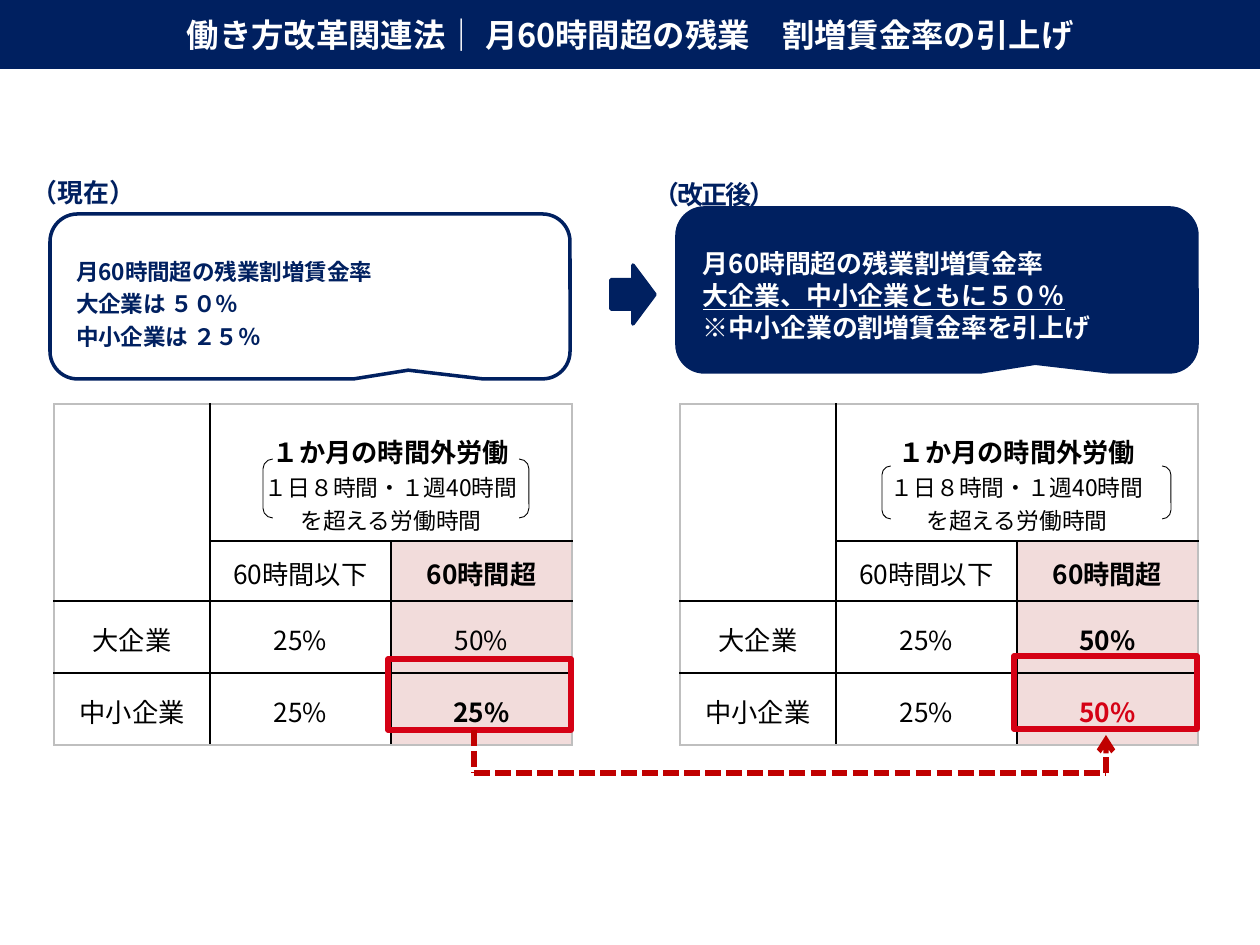
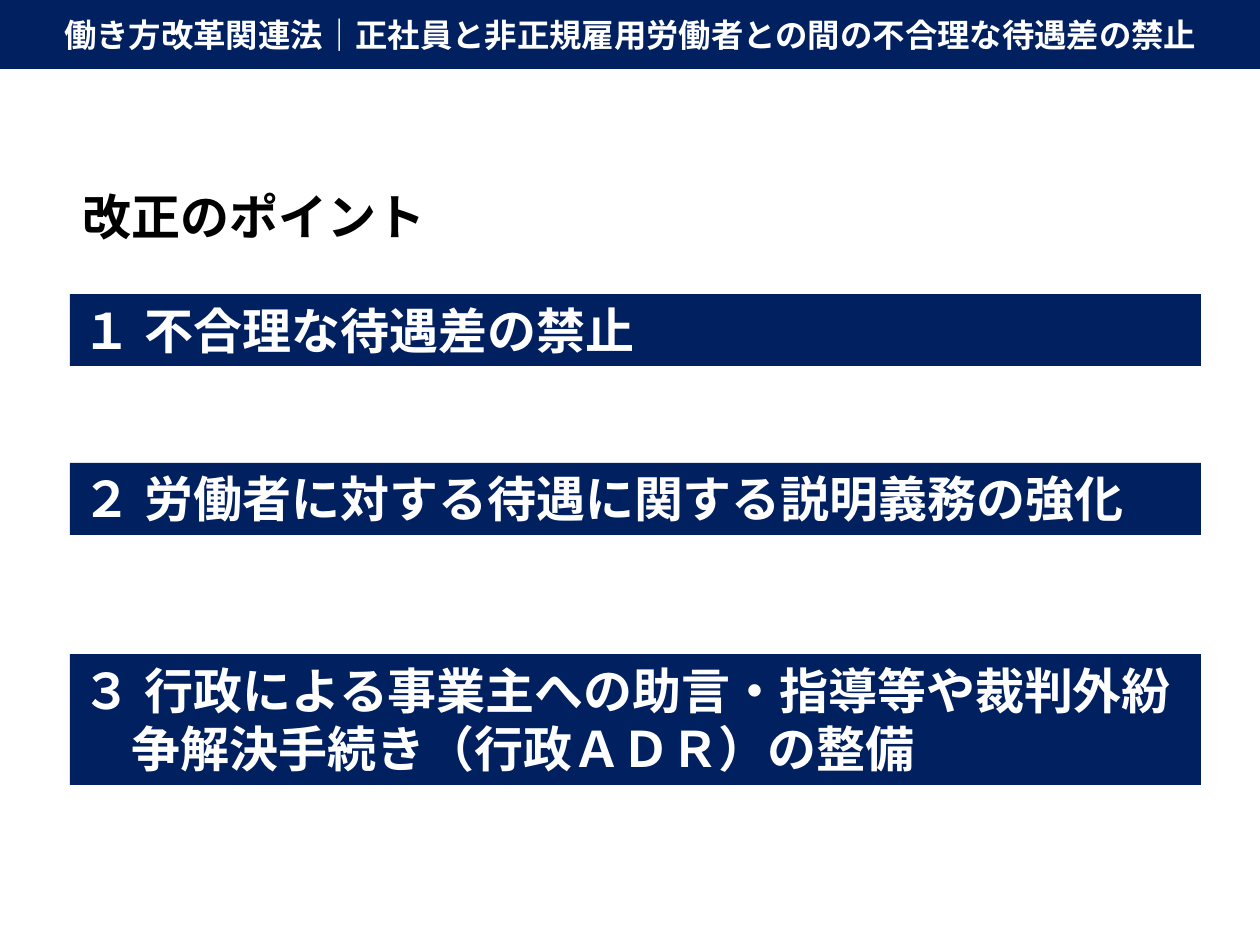
from dataclasses import dataclass
from typing import NamedTuple

from lxml.etree import SubElement
from pptx import Presentation
from pptx.dml.color import RGBColor
from pptx.enum.dml import MSO_LINE
from pptx.enum.lang import MSO_LANGUAGE_ID
from pptx.enum.shapes import MSO_CONNECTOR, MSO_SHAPE
from pptx.enum.text import MSO_ANCHOR, PP_ALIGN
from pptx.oxml.ns import qn
from pptx.util import Emu, Pt


@dataclass(frozen=True)
class Theme:
    navy: str = "002060"
    white: str = "FFFFFF"
    black: str = "000000"
    red: str = "D50115"
    dash_red: str = "C00000"
    pink: str = "F2DCDB"
    grey: str = "BFBFBF"
    body_font: str = "Noto Sans CJK JP"
    point_font: str = "League Spartan"
    title_size: float = 18.5
    label_size: float = 14.8
    callout_size: float = 12.9
    cell_size: float = 15
    note_size: float = 13
    point_size: float = 28


THEME = Theme()


class Box(NamedTuple):
    left: int
    top: int
    width: int
    height: int


class Line(NamedTuple):
    text: str
    underline: bool = False


@dataclass(frozen=True)
class Panel:
    """One side of the before/after comparison."""
    label: str
    label_box: Box
    spacing: float
    callout_box: Box
    callout_fill: str
    callout_color: str
    callout_size: float
    callout: tuple[Line, ...]
    table_left: int
    large_over_60: str
    large_bold: bool
    small_over_60: str
    small_color: str
    bracket: Box
    highlight: Box


class Point(NamedTuple):
    box: Box
    lines: tuple[str, ...]


SLIDE_WIDTH, SLIDE_HEIGHT = 1260, 945
TITLE_BAND = Box(0, 0, SLIDE_WIDTH, 69)
DEFAULT_INSETS = (13, 6, 13, 6)
CALLOUT_INSETS = (18, 9, 13, 0)
CELL_INSETS = (8, 9, 8, 5)
CALLOUT_TAIL = (0.189, 0.447, 0.167)
TABLE_TOP = 404
COLUMNS = (156, 181, 181)
ROWS = (137, 60, 72, 72)
ARROW_BOX = Box(611, 265, 44, 59)
CHANGE_ROUTE = ((474, 730), (474, 773), (1106, 773), (1106, 735))

PANELS = (
    Panel("（現在）", Box(19, 171, 180, 44), 0,
          Box(50, 214, 520, 165), THEME.white, THEME.navy, THEME.callout_size,
          (Line("月60時間超の残業割増賃金率"), Line("大企業は ５０％"), Line("中小企業は ２５％")),
          54, "50%", False, "25%", THEME.black,
          Box(263, 459, 266, 59), Box(388, 659, 183, 71)),
    Panel("（改正後）", Box(640, 173, 180, 44), -0.9,
          Box(677, 208, 520, 164), THEME.navy, THEME.white, THEME.label_size,
          (Line("月60時間超の残業割増賃金率"), Line("大企業、中小企業ともに５０％", True),
           Line("※中小企業の割増賃金率を引上げ")),
          680, "50%", True, "50%", THEME.red,
          Box(882, 466, 289, 53), Box(1014, 656, 183, 73)),
)

POINT_HEADING = Box(70, 180, 420, 72)
POINTS = (
    Point(Box(70, 294, 1131, 72), ("１ 不合理な待遇差の禁止",)),
    Point(Box(70, 463, 1131, 72), ("２ 労働者に対する待遇に関する説明義務の強化",)),
    Point(Box(70, 654, 1131, 131),
          ("３ 行政による事業主への助言・指導等や裁判外紛", "　争解決手続き（行政ＡＤＲ）の整備")),
)


def px(length: int) -> Emu:
    return Emu(round(length * 914400 / 126))


def emu_box(box: Box) -> list[Emu]:
    return [px(length) for length in box]


def rgb(color: str) -> RGBColor:
    return RGBColor.from_string(color)


def write(frame, text: str, *, size: float, color: str, bold: bool = True,
          underline: bool = False, font: str = THEME.body_font, align=PP_ALIGN.LEFT,
          line_spacing=None, spacing: float = 0) -> None:
    """Fill the frame's empty first paragraph, or add the next one."""
    paragraph = frame.paragraphs[-1]
    if paragraph.runs:
        paragraph = frame.add_paragraph()
    paragraph.alignment = align
    if line_spacing:
        paragraph.line_spacing = line_spacing
    run = paragraph.add_run()
    run.text = text
    style = run.font
    style.size, style.bold, style.underline = Pt(size), bold, underline
    style.color.rgb = rgb(color)
    style.name = font
    style.language_id = MSO_LANGUAGE_ID.JAPANESE
    properties = run._r.get_or_add_rPr()
    SubElement(properties, qn("a:ea")).set("typeface", font)
    if spacing:
        properties.set("spc", str(round(spacing * 100)))


def set_insets(holder, insets: tuple[int, ...], anchor) -> None:
    """Works for text frames and table cells alike."""
    (holder.margin_left, holder.margin_top,
     holder.margin_right, holder.margin_bottom) = map(px, insets)
    holder.vertical_anchor = anchor


def add_shape(slide, kind, box: Box, *, fill: str = "", line: str = "", width: float = 1,
              insets=DEFAULT_INSETS, anchor=MSO_ANCHOR.TOP):
    shape = slide.shapes.add_shape(kind, *emu_box(box))
    shape.shadow.inherit = False
    if fill:
        shape.fill.solid()
        shape.fill.fore_color.rgb = rgb(fill)
    else:
        shape.fill.background()
    if line:
        shape.line.color.rgb = rgb(line)
        shape.line.width = Pt(width)
    else:
        shape.line.fill.background()
    shape.text_frame.word_wrap = True
    set_insets(shape.text_frame, insets, anchor)
    return shape


def add_label(slide, box: Box, text: str, **text_format) -> None:
    frame = slide.shapes.add_textbox(*emu_box(box)).text_frame
    frame.word_wrap = True
    set_insets(frame, DEFAULT_INSETS, MSO_ANCHOR.TOP)
    write(frame, text, **text_format)


def add_title_slide(deck, title: str):
    """Add a blank slide topped by the shared title band."""
    slide = deck.slides.add_slide(deck.slide_layouts[6])
    band = add_shape(slide, MSO_SHAPE.RECTANGLE, TITLE_BAND, fill=THEME.navy,
                     anchor=MSO_ANCHOR.MIDDLE)
    write(band.text_frame, title, size=THEME.title_size, color=THEME.white,
          align=PP_ALIGN.CENTER)
    return slide


def set_borders(cell, row: int, column: int) -> None:
    """Grey on the table's outside edges, black inside."""
    last_column = column + cell.span_width - 1 if cell.is_merge_origin else column
    outer_edges = {"lnL": column == 0, "lnR": last_column == len(COLUMNS) - 1,
                   "lnT": row == 0, "lnB": row == len(ROWS) - 1}
    properties = cell._tc.get_or_add_tcPr()
    for index, (edge, is_outer) in enumerate(outer_edges.items()):
        border = properties.makeelement(qn(f"a:{edge}"), {"w": str(Pt(1))})
        fill = SubElement(border, qn("a:solidFill"))
        SubElement(fill, qn("a:srgbClr")).set("val", THEME.grey if is_outer else THEME.black)
        properties.insert(index, border)


def add_rate_table(slide, panel: Panel) -> None:
    box = Box(panel.table_left, TABLE_TOP, sum(COLUMNS), sum(ROWS))
    table = slide.shapes.add_table(len(ROWS), len(COLUMNS), *emu_box(box)).table
    table.first_row = table.horz_banding = False
    for column, width in zip(table.columns, COLUMNS):
        column.width = px(width)
    for row, height in zip(table.rows, ROWS):
        row.height = px(height)
    table.cell(0, 0).merge(table.cell(1, 0))
    table.cell(0, 1).merge(table.cell(0, 2))
    for r in range(len(ROWS)):
        for c in range(len(COLUMNS)):
            cell = table.cell(r, c)
            over_60 = r > 0 and c == 2
            cell.fill.solid()
            cell.fill.fore_color.rgb = rgb(THEME.pink if over_60 else THEME.white)
            set_insets(cell, CELL_INSETS, MSO_ANCHOR.MIDDLE)
            set_borders(cell, r, c)

    centred = dict(color=THEME.black, align=PP_ALIGN.CENTER)
    header = table.cell(0, 1).text_frame
    write(header, "１か月の時間外労働", size=THEME.cell_size, line_spacing=1.5, **centred)
    for note in ("１日８時間・１週40時間", "を超える労働時間"):
        write(header, note, size=THEME.note_size, bold=False, **centred)
    rates = (
        ("", "60時間以下", "60時間超"),
        ("大企業", "25%", panel.large_over_60),
        ("中小企業", "25%", panel.small_over_60),
    )
    for r, values in enumerate(rates, start=1):
        for c, value in enumerate(values):
            if not value:
                continue
            bold = c == 2 and (r != 2 or panel.large_bold)
            color = panel.small_color if (r, c) == (3, 2) else THEME.black
            write(table.cell(r, c).text_frame, value, size=THEME.cell_size, bold=bold,
                  **(centred | {"color": color}))


def add_panel(slide, panel: Panel) -> None:
    add_rate_table(slide, panel)
    add_label(slide, panel.label_box, panel.label, size=THEME.label_size,
              color=THEME.navy, spacing=panel.spacing)
    callout = add_shape(slide, MSO_SHAPE.ROUNDED_RECTANGULAR_CALLOUT, panel.callout_box,
                        fill=panel.callout_fill, line=THEME.navy, width=2,
                        insets=CALLOUT_INSETS, anchor=MSO_ANCHOR.MIDDLE)
    for index, value in enumerate(CALLOUT_TAIL):
        callout.adjustments[index] = value
    for line in panel.callout:
        write(callout.text_frame, line.text, size=panel.callout_size,
              color=panel.callout_color, underline=line.underline, line_spacing=Pt(18.5))
    add_shape(slide, MSO_SHAPE.RECTANGLE, panel.highlight, line=THEME.red, width=3)
    add_shape(slide, MSO_SHAPE.DOUBLE_BRACKET, panel.bracket, line=THEME.black, width=0.5)


def add_change_route(slide) -> None:
    """Dashed path from the current rate to the revised rate."""
    for start, end in zip(CHANGE_ROUTE, CHANGE_ROUTE[1:]):
        segment = slide.shapes.add_connector(MSO_CONNECTOR.STRAIGHT, *map(px, start + end))
        segment.line.color.rgb = rgb(THEME.dash_red)
        segment.line.width = Pt(3)
        segment.line.dash_style = MSO_LINE.SQUARE_DOT
        if end == CHANGE_ROUTE[-1]:
            SubElement(segment.line._get_or_add_ln(), qn("a:tailEnd")).set("type", "arrow")
        SubElement(segment._element.spPr, qn("a:effectLst"))


def build_overtime_slide(deck) -> None:
    slide = add_title_slide(deck, "働き方改革関連法｜ 月60時間超の残業　割増賃金率の引上げ")
    for panel in PANELS:
        add_panel(slide, panel)
    add_shape(slide, MSO_SHAPE.RIGHT_ARROW, ARROW_BOX, fill=THEME.navy, line=THEME.navy, width=2)
    add_change_route(slide)


def build_points_slide(deck) -> None:
    slide = add_title_slide(deck, "働き方改革関連法｜正社員と非正規雇用労働者との間の不合理な待遇差の禁止")
    point_format = dict(size=THEME.point_size, font=THEME.point_font)
    add_label(slide, POINT_HEADING, "改正のポイント", color=THEME.black, **point_format)
    for point in POINTS:
        bar = add_shape(slide, MSO_SHAPE.RECTANGLE, point.box, fill=THEME.navy)
        for line in point.lines:
            write(bar.text_frame, line, color=THEME.white, **point_format)


def main() -> None:
    deck = Presentation()
    deck.slide_width, deck.slide_height = px(SLIDE_WIDTH), px(SLIDE_HEIGHT)
    build_overtime_slide(deck)
    build_points_slide(deck)
    deck.save("out.pptx")


if __name__ == "__main__":
    main()
